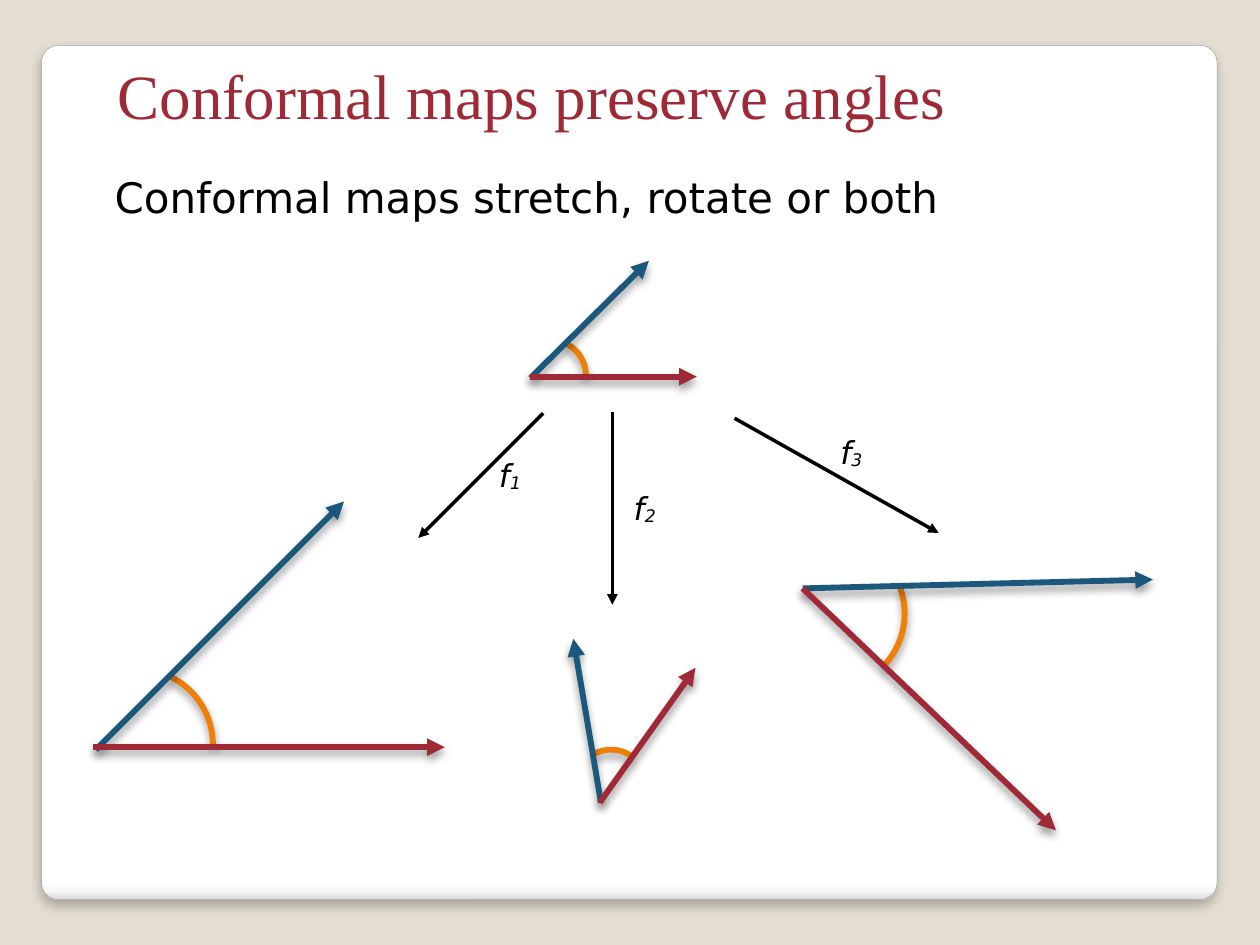
import math
from dataclasses import dataclass

import pptx
import pptx.dml.color
import pptx.enum.dml
import pptx.enum.shapes
import pptx.enum.text
import pptx.oxml
import pptx.oxml.ns
import pptx.util
from lxml import etree

Inches = pptx.util.Inches
Pt = pptx.util.Pt
RGBColor = pptx.dml.color.RGBColor
qn = pptx.oxml.ns.qn
Point = tuple[float, float]

SAND = RGBColor(0xE3, 0xDE, 0xD1)
CARD_EDGE = RGBColor(0xA2, 0xA1, 0xA1)
BLUE = RGBColor(0x1B, 0x58, 0x7C)
RED = RGBColor(0x9F, 0x29, 0x36)
ORANGE = RGBColor(0xF0, 0x7F, 0x09)
BLACK = RGBColor(0, 0, 0)

RAY_WIDTH = 3.35
MAP_WIDTH = 2
ARC_SWEEP = 63.4
ARC_STEPS = 24
CARD_STOPS = ((0, "FFFFFF"), (98, "FFFFFF"), (99, "F7F7F7"), (100, "D9D9D9"))
FRAME_FORMAT = {
    "margin_left": Inches(0.05),
    "margin_right": Inches(0.05),
    "margin_top": Inches(0.05),
    "margin_bottom": Inches(0.05),
    "word_wrap": False,
    "auto_size": pptx.enum.text.MSO_AUTO_SIZE.SHAPE_TO_FIT_TEXT,
}


@dataclass
class Shadow:
    opacity: int
    blur: float
    distance: float


@dataclass
class Ray:
    start: Point
    tip: Point


@dataclass
class Angle:
    blue: Ray
    red: Ray
    arc_center: Point
    arc_radius: float
    turn: float


@dataclass
class Mapping:
    index: str
    arrow: Ray
    label_at: Point


CARD_SHADOW = Shadow(25, 6, 4)
RAY_SHADOW = Shadow(40, 5, 3)

ANGLES = (
    Angle(Ray((0.76, 5.95), (2.73, 3.98)), Ray((0.74, 5.93), (3.53, 5.93)),
          (1.09, 5.91), 0.6, 0),
    Angle(Ray((4.77, 6.37), (4.55, 5.07)), Ray((4.76, 6.37), (5.52, 5.3)),
          (4.85, 6.23), 0.28, -54.7),
    Angle(Ray((4.21, 3), (5.15, 2.07)), Ray((4.21, 2.99), (5.53, 2.99)),
          (4.37, 2.98), 0.28, 0),
    Angle(Ray((6.37, 4.67), (9.15, 4.6)), Ray((6.37, 4.67), (8.38, 6.59)),
          (6.58, 4.87), 0.6, 43.7),
)
MAPPINGS = (
    Mapping("1", Ray((4.31, 3.28), (3.32, 4.27)), (3.91, 3.57)),
    Mapping("2", Ray((4.86, 3.27), (4.86, 4.8)), (4.98, 3.83)),
    Mapping("3", Ray((5.83, 3.32), (7.45, 4.23)), (6.62, 3.39)),
)


def set_effects(drawn, shadow: Shadow | None) -> None:
    """Replace the theme shadow by the given one, or by none."""
    effects = etree.SubElement(drawn._element.spPr, qn("a:effectLst"))
    if shadow is None:
        return
    outer = etree.SubElement(
        effects, qn("a:outerShdw"), blurRad=str(Pt(shadow.blur)),
        dist=str(Pt(shadow.distance)), dir="5400000", algn="t", rotWithShape="0")
    tint = etree.SubElement(outer, qn("a:srgbClr"), val="000000")
    etree.SubElement(tint, qn("a:alpha"), val=str(shadow.opacity * 1000))


def draw_arrow(slide, ray: Ray, color: RGBColor, width: float,
               shadow: Shadow | None = None) -> None:
    arrow = slide.shapes.add_connector(
        pptx.enum.shapes.MSO_CONNECTOR.STRAIGHT,
        *(Inches(value) for value in (*ray.start, *ray.tip)))
    arrow.line.color.rgb = color
    arrow.line.width = Pt(width)
    etree.SubElement(arrow.line._get_or_add_ln(), qn("a:tailEnd"), type="triangle")
    set_effects(arrow, shadow)


def draw_arc(slide, angle: Angle) -> None:
    center_x, center_y = angle.arc_center
    points = []
    for step in range(ARC_STEPS + 1):
        theta = math.radians(angle.turn - ARC_SWEEP * (1 - step / ARC_STEPS))
        points.append((Inches(center_x + angle.arc_radius * math.cos(theta)),
                       Inches(center_y + angle.arc_radius * math.sin(theta))))
    builder = slide.shapes.build_freeform(*points[0])
    builder.add_line_segments(points[1:], close=False)
    arc = builder.convert_to_shape()
    arc.fill.background()
    arc.line.color.rgb = ORANGE
    arc.line.width = Pt(RAY_WIDTH)
    set_effects(arc, RAY_SHADOW)


def draw_angle(slide, angle: Angle) -> None:
    draw_arc(slide, angle)
    draw_arrow(slide, angle.blue, BLUE, RAY_WIDTH, RAY_SHADOW)
    draw_arrow(slide, angle.red, RED, RAY_WIDTH, RAY_SHADOW)


def add_text(slide, at: Point, size: Point):
    """Add an unwrapped text box and return its paragraph."""
    frame = slide.shapes.add_textbox(
        *(Inches(value) for value in (*at, *size))).text_frame
    for name, value in FRAME_FORMAT.items():
        setattr(frame, name, value)
    return frame.paragraphs[0]


def add_run(paragraph, text: str, size: float, color: RGBColor = BLACK,
            font: str = "DejaVu Sans", italic: bool = False):
    run = paragraph.add_run()
    run.text = text
    run.font.color.rgb = color
    font_format = {"size": Pt(size), "name": font, "italic": italic}
    for name, value in font_format.items():
        setattr(run.font, name, value)
    return run


def draw_mapping(slide, mapping: Mapping) -> None:
    draw_arrow(slide, mapping.arrow, BLACK, MAP_WIDTH)
    label = add_text(slide, mapping.label_at, (0.3, 0.41))
    add_run(label, "f", 18, italic=True)
    subscript = add_run(label, mapping.index, 17, italic=True)
    subscript.font._element.set("baseline", "-6000")


def draw_card(slide) -> None:
    card = slide.shapes.add_shape(
        pptx.enum.shapes.MSO_SHAPE.ROUNDED_RECTANGLE,
        Inches(0.33), Inches(0.36), Inches(9.33), Inches(6.78))
    card.adjustments[0] = 0.02
    card.fill.gradient()
    card.fill.gradient_angle = 270
    stops = card._element.spPr.find(".//" + qn("a:gsLst"))
    for stop in list(stops):
        stops.remove(stop)
    for position, color in CARD_STOPS:
        stop = etree.SubElement(stops, qn("a:gs"), pos=str(position * 1000))
        etree.SubElement(stop, qn("a:srgbClr"), val=color)
    card.line.color.rgb = CARD_EDGE
    card.line.width = Pt(0.25)
    set_effects(card, CARD_SHADOW)


def main() -> None:
    deck = pptx.Presentation()
    deck.slide_width, deck.slide_height = Inches(10), Inches(7.5)
    slide = deck.slides.add_slide(deck.slide_layouts[6])

    # Background and card
    slide.background.fill.solid()
    slide.background.fill.fore_color.rgb = SAND
    draw_card(slide)

    # The angle and its three images
    for angle in ANGLES:
        draw_angle(slide, angle)

    # Title and statement
    title = add_text(slide, (0.88, 0.4), (6.68, 0.66))
    title.alignment = pptx.enum.text.PP_ALIGN.CENTER
    add_run(title, "Conformal maps preserve angles", 36, RED, "Times New Roman")
    statement = add_text(slide, (0.86, 1.31), (6.72, 0.5))
    add_run(statement, "Conformal maps stretch, rotate or both", 24)

    # Maps from the angle to its images
    for mapping in MAPPINGS:
        draw_mapping(slide, mapping)

    deck.save("out.pptx")


if __name__ == "__main__":
    main()
